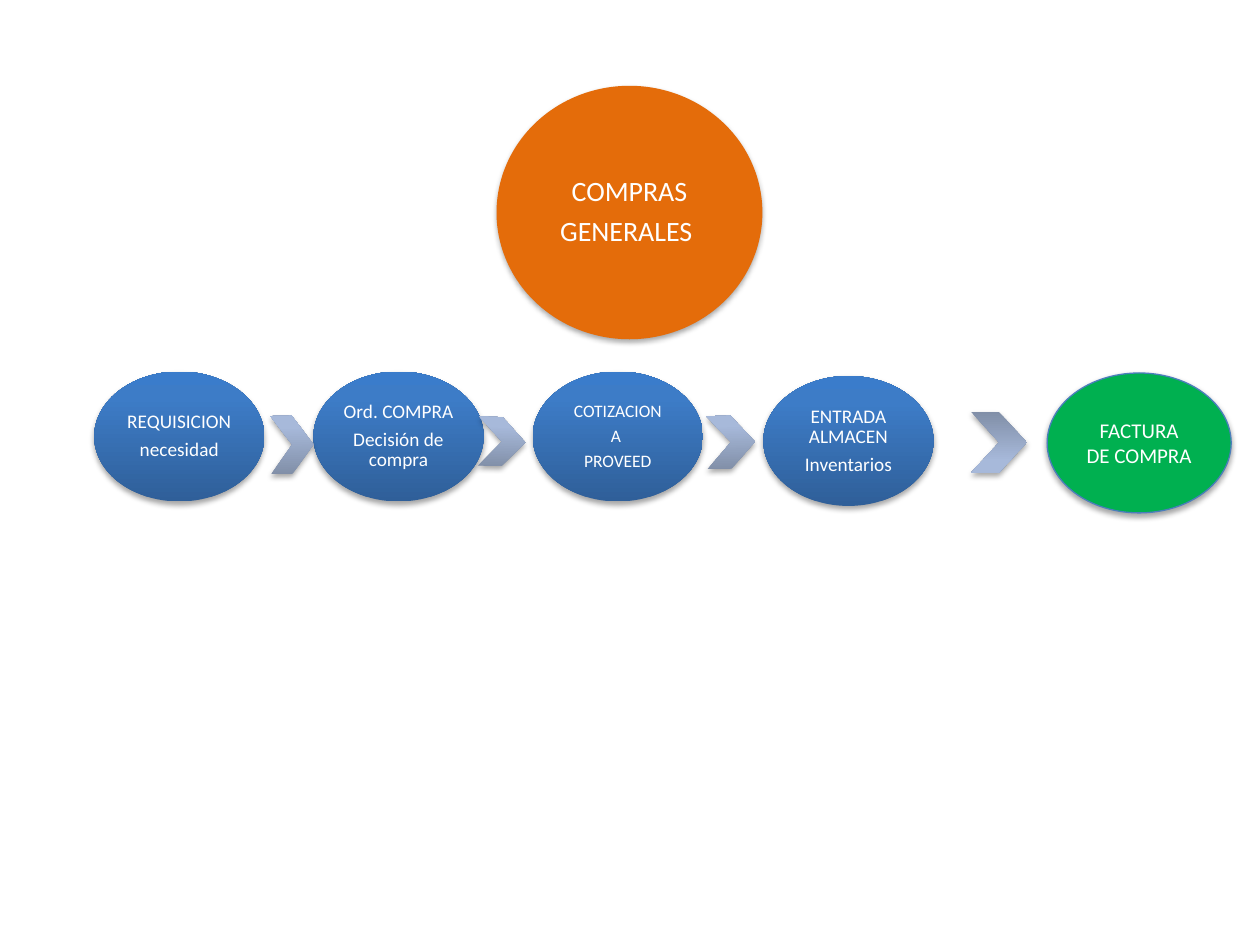
from copy import deepcopy

from lxml import etree
from pptx import Presentation
from pptx import util as u
from pptx.dml.color import RGBColor
from pptx.enum import shapes, text
from pptx.oxml import ns

WHITE = RGBColor(0xFF, 0xFF, 0xFF)
ORANGE = RGBColor(0xE4, 0x6C, 0x0A)
GREEN = RGBColor(0x00, 0xB0, 0x50)
OUTLINE = RGBColor(0x4B, 0x7E, 0xBC)
BLUES = ((0, RGBColor(0x2F, 0x5F, 0x99)), (0.8, RGBColor(0x3D, 0x7C, 0xC7)),
         (1, RGBColor(0x3A, 0x7C, 0xCB)))
GREYS = ((0, RGBColor(0x81, 0x8F, 0xA8)), (0.8, RGBColor(0xA7, 0xB9, 0xDA)),
         (1, RGBColor(0xA7, 0xBA, 0xDC)))


class FlowSlide:
    font = "Calibri"
    paragraph_gap = 0.35

    def __init__(self, slide):
        self.slide = slide

    def shape(self, kind, left, top, width, height, fill):
        shape = self.slide.shapes.add_shape(
            kind, u.Cm(left), u.Cm(top), u.Cm(width), u.Cm(height))
        if isinstance(fill, RGBColor):
            shape.fill.solid()
            shape.fill.fore_color.rgb = fill
        else:
            self.gradient(shape, fill)
        shape.line.fill.background()
        self.shadow(shape)
        return shape

    def gradient(self, shape, colors):
        shape.fill.gradient()
        shape.fill.gradient_angle = 90
        stops = shape.element.spPr.find(".//" + ns.qn("a:gsLst"))
        stops.append(deepcopy(stops[-1]))
        for stop, (position, color) in zip(shape.fill.gradient_stops, colors):
            stop.position = position
            stop.color.rgb = color

    def shadow(self, shape):
        shape.shadow.inherit = False
        effects = shape.element.spPr.find(ns.qn("a:effectLst"))
        outer = etree.SubElement(effects, ns.qn("a:outerShdw"), blurRad="40000",
                                 dist="23000", dir="5400000", rotWithShape="0")
        color = etree.SubElement(outer, ns.qn("a:srgbClr"), val="000000")
        etree.SubElement(color, ns.qn("a:alpha"), val="35000")

    def ellipse(self, left, top, width, height, fill, lines, size, inset=0.05,
                spacing=0.9):
        shape = self.shape(shapes.MSO_SHAPE.OVAL, left, top, width, height, fill)
        frame = shape.text_frame
        frame.word_wrap = True
        frame.vertical_anchor = text.MSO_ANCHOR.MIDDLE
        frame.margin_left = frame.margin_right = u.Cm(inset)
        frame.margin_top = frame.margin_bottom = u.Cm(inset)
        for index, line in enumerate(lines):
            paragraph = frame.add_paragraph() if index else frame.paragraphs[0]
            paragraph.alignment = text.PP_ALIGN.CENTER
            paragraph.line_spacing = spacing
            paragraph.space_after = u.Pt(size * self.paragraph_gap)
            run = paragraph.add_run()
            run.text = line
            run.font.name = self.font
            run.font.size = u.Pt(size)
            run.font.color.rgb = WHITE
        return shape

    def chevron(self, left, top, width, height, rotation, flipped=False):
        shape = self.shape(shapes.MSO_SHAPE.CHEVRON, left, top, width, height, GREYS)
        shape.rotation = rotation
        if flipped:
            shape.element.spPr.find(ns.qn("a:xfrm")).set("flipV", "1")


def main():
    presentation = Presentation()
    presentation.slide_width = u.Cm(25.4)
    presentation.slide_height = u.Cm(19.05)
    flow = FlowSlide(presentation.slides.add_slide(presentation.slide_layouts[6]))

    flow.ellipse(10.01, 1.73, 5.36, 5.11, ORANGE, ["COMPRAS", "GENERALES "], 16)

    first_steps = (
        (["REQUISICION", "necesidad"], 11),
        (["Ord. COMPRA", "Decisión de compra"], 11),
        (["COTIZACION", "A ", "PROVEED"], 10),
    )
    for index, (lines, size) in enumerate(first_steps):
        flow.ellipse(1.9 + index * 4.42, 7.49, 3.43, 2.62, BLUES, lines, size)
    flow.ellipse(15.39, 7.58, 3.43, 2.62, BLUES, ["ENTRADA ALMACEN", "Inventarios"], 11)

    for chevron in (
        (5.46, 8.38, 0.86, 1.17, 359.1),
        (9.65, 8.41, 0.94, 0.99, 1.6),
        (14.25, 8.38, 0.97, 1.07, 358.7),
        (19.58, 8.31, 1.12, 1.22, 0.1, True),
    ):
        flow.chevron(*chevron)

    invoice = flow.ellipse(21.11, 7.52, 3.71, 2.82, GREEN, ["FACTURA DE COMPRA"], 12,
                           inset=0.25, spacing=1.0)
    invoice.line.color.rgb = OUTLINE
    invoice.line.width = u.Pt(0.75)

    presentation.save("out.pptx")


if __name__ == "__main__":
    main()
